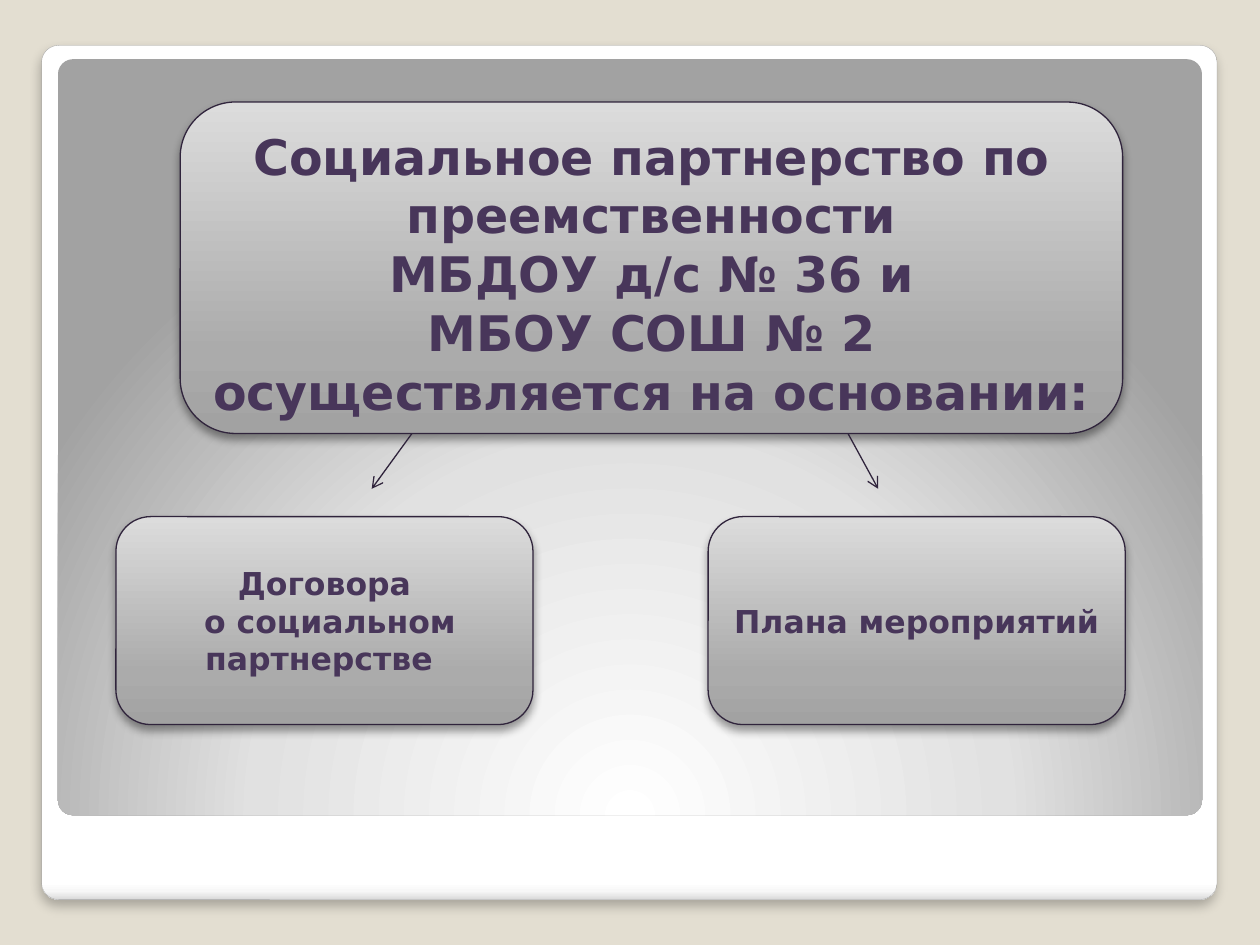
import dataclasses

import pptx
import pptx.dml.color
import pptx.enum.shapes
import pptx.enum.text
import pptx.oxml.ns
import pptx.util
from lxml import etree

qn = pptx.oxml.ns.qn
KIND = pptx.enum.shapes.MSO_SHAPE
ANCHOR = pptx.enum.text.MSO_ANCHOR
ALIGN = pptx.enum.text.PP_ALIGN


@dataclasses.dataclass(frozen=True)
class Theme:
    """Colours, gradients, shadows and type of the slide."""
    font: str = "DejaVu Sans"
    head: int = 28
    body: int = 18
    ink: str = "48365A"
    edge: str = "30243C"
    rim: str = "A4A4A4"
    back: str = "E3DED1"
    paper: tuple = ((0, "FFFFFF"), (98, "FFFFFF"), (99, "F7F7F7"), (100, "DADADA"))
    glow: tuple = ((0, "FFFFFF"), (55, "E1E1E1"), (100, "A2A2A2"))
    steel: tuple = ((0, "A2A2A2"), (25, "ABABAB"), (100, "DCDCDC"))
    soft: tuple = (25, 6, 4)
    deep: tuple = (40, 5.2, 3)


THEME = Theme()


@dataclasses.dataclass(frozen=True)
class Box:
    """A region in EMU, addressed in percent of its size."""
    left: int
    top: int
    width: int
    height: int

    def spot(self, x, y):
        """Return the point at x and y percent."""
        return int(self.left + self.width * x / 100), int(self.top + self.height * y / 100)

    def area(self, x, y, wide, high):
        """Return the box inside this one at the given percents."""
        return Box(*self.spot(x, y), int(self.width * wide / 100), int(self.height * high / 100))

    def frame(self):
        """Return left, top, width and height."""
        return self.left, self.top, self.width, self.height


def rgb(code):
    """Turn a hex code into a colour."""
    return pptx.dml.color.RGBColor.from_string(code)


def add(node, tag, **attrs):
    """Append a drawing element and return it."""
    return etree.SubElement(node, qn("a:" + tag), {k: str(v) for k, v in attrs.items()})


def blend(shape, stops, angle):
    """Fill a shape with a linear blend, or a round one if angle is None."""
    shape.fill.gradient()
    grad = shape._element.spPr.find(qn("a:gradFill"))
    for child in list(grad):
        grad.remove(child)
    group = add(grad, "gsLst")
    for pos, code in stops:
        add(add(group, "gs", pos=pos * 1000), "srgbClr", val=code)
    if angle is None:
        ring = add(grad, "path", path="circle")
        add(ring, "fillToRect", l=50000, t=175000, r=50000, b=-75000)
    else:
        add(grad, "lin", ang=angle * 60000, scaled=0)


def shade(shape, alpha, blur, dist):
    """Drop a black shadow straight down."""
    effect = shape._element.spPr.find(qn("a:effectLst"))
    drop = add(effect, "outerShdw", blurRad=int(blur * 12700), dist=dist * 12700,
               dir=5400000, algn="t", rotWithShape=0)
    add(add(drop, "srgbClr", val="000000"), "alpha", val=alpha * 1000)


def plate(slide, box, stops, angle, edge=None, width=0.75, drop=None, bend=None):
    """Draw a rounded plate in the box."""
    shape = slide.shapes.add_shape(KIND.ROUNDED_RECTANGLE, *box.frame())
    shape.shadow.inherit = False
    if bend is not None:
        shape.adjustments[0] = bend
    blend(shape, stops, angle)
    if edge:
        shape.line.color.rgb = rgb(edge)
        shape.line.width = pptx.util.Pt(width)
    else:
        shape.line.fill.background()
    if drop:
        shade(shape, *drop)
    return shape


def write(shape, lines, size, anchor):
    """Set centred bold lines in a shape."""
    frame = shape.text_frame
    frame.word_wrap = True
    frame.vertical_anchor = anchor
    frame.text = "\n".join(lines)
    for para in frame.paragraphs:
        para.alignment = ALIGN.CENTER
        para.font.name = THEME.font
        para.font.size = pptx.util.Pt(size)
        para.font.bold = True
        para.font.color.rgb = rgb(THEME.ink)


def stage(slide, page):
    """Draw the paper sheet and its glowing panel."""
    slide.background.fill.solid()
    slide.background.fill.fore_color.rgb = rgb(THEME.back)
    plate(slide, page.area(3.3, 4.8, 93.3, 90.4), THEME.paper, 90,
          THEME.rim, 0.16, THEME.soft, 0.02)
    plate(slide, page.area(4.6, 6.27, 90.8, 80), THEME.glow, None, bend=0.02)


def card(slide, box):
    """Draw a steel card in the box."""
    return plate(slide, box, THEME.steel, 270, THEME.edge, drop=THEME.deep)


def title(slide, box, lines):
    """Draw the head card with its text set a little lower."""
    card(slide, box)
    label = slide.shapes.add_textbox(*box.area(0, 5.4, 100, 111).frame())
    write(label, lines, THEME.head, ANCHOR.TOP)


def arrow(slide, start, end):
    """Draw an open arrow between two points."""
    line = slide.shapes.add_connector(pptx.enum.shapes.MSO_CONNECTOR.STRAIGHT, *start, *end)
    line.line.color.rgb = rgb(THEME.edge)
    line.line.width = pptx.util.Pt(0.75)
    props = line._element.spPr
    add(props.find(qn("a:ln")), "tailEnd", type="arrow")
    add(props, "effectLst")


def basis(slide, page):
    """Draw the two cards and the arrows that lead to them."""
    cards = ((56.2, ["Плана мероприятий"]),
             (9.2, ["Договора", " о социальном партнерстве "]))
    for left, lines in cards:
        shape = card(slide, page.area(left, 54.67, 33.1, 22))
        write(shape, lines, THEME.body, ANCHOR.MIDDLE)
    for start, end in ((32.7, 29.5), (67.3, 69.7)):
        arrow(slide, page.spot(start, 45.87), page.spot(end, 51.73))


def main():
    """Build the slide and save it."""
    deck = pptx.Presentation()
    deck.slide_width = pptx.util.Inches(10)
    deck.slide_height = pptx.util.Inches(7.5)
    page = Box(0, 0, deck.slide_width, deck.slide_height)
    slide = deck.slides.add_slide(deck.slide_layouts[6])
    stage(slide, page)
    title(slide, page.area(14.3, 10.8, 74.8, 35.07),
          ["Социальное партнерство по преемственности", " МБДОУ д/с № 36 и ",
           "МБОУ СОШ № 2 осуществляется на основании:"])
    basis(slide, page)
    deck.save("out.pptx")


if __name__ == "__main__":
    main()
